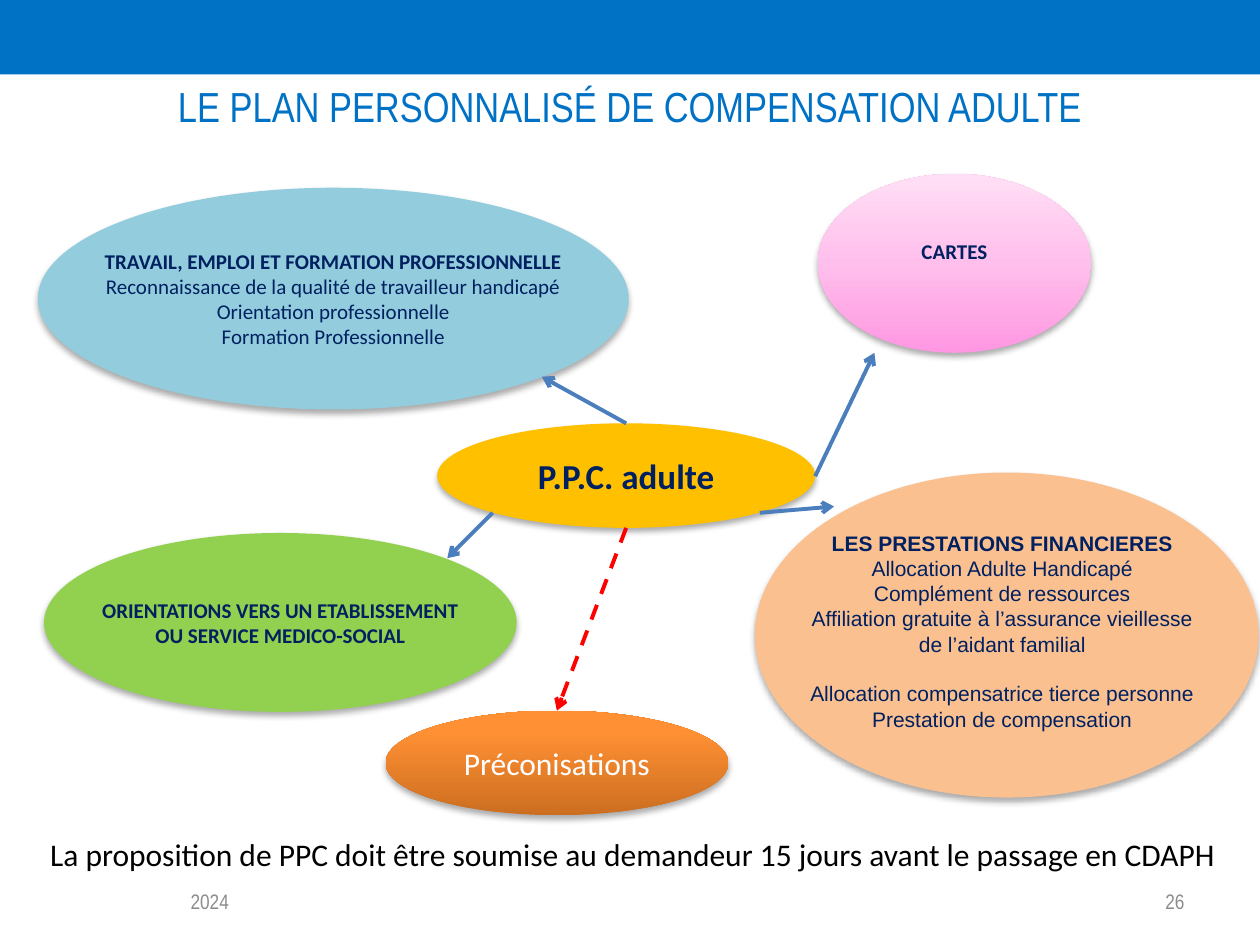
"""Build the slide on the adult personalised compensation plan."""
from dataclasses import dataclass

from lxml import etree
from pptx import Presentation
from pptx.dml.color import RGBColor
from pptx.enum.dml import MSO_LINE
from pptx.enum.shapes import MSO_CONNECTOR, MSO_SHAPE
from pptx.enum.text import MSO_ANCHOR, MSO_AUTO_SIZE, PP_ALIGN
from pptx.oxml.ns import qn
from pptx.util import Inches, Pt

STRAIGHT, DASH = MSO_CONNECTOR.STRAIGHT, MSO_LINE.DASH
OVAL, RECTANGLE = MSO_SHAPE.OVAL, MSO_SHAPE.RECTANGLE
TOP, MIDDLE = MSO_ANCHOR.TOP, MSO_ANCHOR.MIDDLE
LEFT, CENTER, RIGHT = PP_ALIGN.LEFT, PP_ALIGN.CENTER, PP_ALIGN.RIGHT
NO_FIT = MSO_AUTO_SIZE.NONE

COLUMNS, ROWS = 100, 75
CELL = Inches(0.1)
TOP_SITE = 0
COLORS = {
    "brand": "0072C6", "navy": "002060", "white": "FFFFFF", "black": "000000",
    "gray": "8C8C8C", "gold": "FFC000", "aqua": "93CDDD", "peach": "FAC090",
    "green": "92D050", "link": "4B7EBC", "alert": "FF0000",
}
PINKS = ((0, "FF97E2"), (50, "FFBFEC"), (100, "FFDFF5"))
ORANGES = ((0, "CC6E20"), (80, "FF9034"), (100, "FF9136"))


@dataclass(frozen=True)
class Box:
    """A rectangle in grid columns and rows."""
    column: float
    row: float
    width: float
    height: float

    def lengths(self):
        return [cells(n) for n in (self.column, self.row, self.width, self.height)]


@dataclass(frozen=True)
class Topic:
    """An ellipse of the map with its text."""
    box: Box
    fill: str | tuple
    text: str = ""
    size: float = 12
    color: str = "navy"
    bold_lines: int = 1
    wrap: bool = False
    bottom: float = 0.5


@dataclass(frozen=True)
class Arrow:
    """An arrow between two grid points."""
    start: tuple
    end: tuple
    color: str = "link"
    dashed: bool = False


CENTRE = Topic(Box(34.7, 33.6, 30, 8.3), "gold", "P.P.C. adulte", size=20)
ADVICE = Topic(Box(30.6, 56.4, 27.2, 8.3), ORANGES, "Préconisations",
               size=18, color="white", bold_lines=0, wrap=True)
BENEFITS = Topic(Box(59.9, 37.5, 40, 25.8), "peach")
TOPICS = (
    CENTRE,
    Topic(Box(3, 14.9, 46.9, 17.6), "aqua",
          "TRAVAIL, EMPLOI ET FORMATION PROFESSIONNELLE\n"
          "Reconnaissance de la qualité de travailleur handicapé\n"
          "Orientation professionnelle\nFormation Professionnelle"),
    Topic(Box(64.9, 13.8, 21.7, 14.2), PINKS, "CARTES", bottom=2.5),
    BENEFITS,
    Topic(Box(3.5, 42.3, 37.5, 14.2), "green",
          "ORIENTATIONS VERS UN ETABLISSEMENT\nOU SERVICE MEDICO-SOCIAL",
          bold_lines=2),
    ADVICE,
)
BENEFITS_TEXT = (
    "LES PRESTATIONS FINANCIERES\nAllocation Adulte Handicapé\n"
    "Complément de ressources\n"
    "Affiliation gratuite à l’assurance vieillesse de l’aidant familial\n"
    "Allocation compensatrice tierce personne\nPrestation de compensation"
)
TO_WORK = Arrow((49.7, 33.6), (43, 29.9))
TO_ADVICE = Arrow((49.7, 41.9), (44.2, 56.4), "alert", dashed=True)
ARROWS = (
    TO_WORK,
    Arrow((64.7, 37.8), (69.4, 28)),
    Arrow((60.3, 40.7), (66.2, 40.2)),
    Arrow((39.1, 40.7), (35.5, 44.3)),
    TO_ADVICE,
)


def cells(count: float) -> int:
    """Turn a count of grid cells into a length."""
    return round(count * CELL)


def rgb(name: str) -> RGBColor:
    """Look up a named colour."""
    return RGBColor.from_string(COLORS[name])


def write(frame, text: str, *, size: float, color: str, font="Calibri", bold_lines=0,
          align=CENTER, anchor=TOP, wrap=True, bottom=0.5, gap_line=None) -> None:
    """Fill a text frame, one paragraph per line, with the given format."""
    frame.auto_size = NO_FIT
    frame.word_wrap = wrap
    frame.vertical_anchor = anchor
    frame.margin_left = frame.margin_right = cells(1)
    frame.margin_top, frame.margin_bottom = cells(0.5), cells(bottom)
    for number, line in enumerate(text.split("\n")):
        paragraph = frame.add_paragraph() if number else frame.paragraphs[0]
        paragraph.text = line
        paragraph.alignment = align
        paragraph.font.name, paragraph.font.size = font, Pt(size)
        paragraph.font.bold = number < bold_lines
        paragraph.font.color.rgb = rgb(color)
        if number == gap_line:
            paragraph.space_before = Pt(14)


def add_label(slide, box: Box, text: str, **style) -> None:
    """Add a text box."""
    write(slide.shapes.add_textbox(*box.lengths()).text_frame, text, **style)


def paint(shape, fill: str | tuple) -> None:
    """Fill a shape with one colour or with an upward gradient."""
    shape.line.fill.background()
    shape.shadow.inherit = False
    if isinstance(fill, str):
        shape.fill.solid()
        shape.fill.fore_color.rgb = rgb(fill)
        return
    shape.fill.gradient()
    shape.fill.gradient_angle = 90
    stops = shape._element.spPr.find(f".//{qn('a:gsLst')}")
    for stop in list(stops):
        stops.remove(stop)
    for position, color in fill:
        stop = etree.SubElement(stops, qn("a:gs"), pos=str(position * 1000))
        etree.SubElement(stop, qn("a:srgbClr"), val=color)


def cast_shadow(shape) -> None:
    """Give a shape a soft shadow below it."""
    effects = shape._element.spPr.find(qn("a:effectLst"))
    shadow = etree.SubElement(effects, qn("a:outerShdw"), blurRad=str(Pt(3.5)),
                              dist=str(Pt(2.2)), dir="5400000", rotWithShape="0")
    tint = etree.SubElement(shadow, qn("a:srgbClr"), val=COLORS["black"])
    etree.SubElement(tint, qn("a:alpha"), val="32000")


def add_topic(slide, topic: Topic):
    """Draw one ellipse of the map."""
    ellipse = slide.shapes.add_shape(OVAL, *topic.box.lengths())
    paint(ellipse, topic.fill)
    cast_shadow(ellipse)
    if topic.text:
        write(ellipse.text_frame, topic.text, size=topic.size, color=topic.color,
              bold_lines=topic.bold_lines, anchor=MIDDLE, wrap=topic.wrap,
              bottom=topic.bottom)
    return ellipse


def add_arrow(slide, arrow: Arrow):
    """Draw one arrow with an open head at its end."""
    connector = slide.shapes.add_connector(
        STRAIGHT, *(cells(n) for n in arrow.start + arrow.end))
    connector.line.color.rgb = rgb(arrow.color)
    connector.line.width = Pt(2.25)
    if arrow.dashed:
        connector.line.dash_style = DASH
    etree.SubElement(connector.line._get_or_add_ln(), qn("a:tailEnd"), type="arrow")
    etree.SubElement(connector._element.spPr, qn("a:effectLst"))
    return connector


def main() -> None:
    """Build and save the slide."""
    deck = Presentation()
    deck.slide_width, deck.slide_height = cells(COLUMNS), cells(ROWS)
    slide = deck.slides.add_slide(deck.slide_layouts[5])
    paint(slide.shapes.add_shape(RECTANGLE, *Box(0, 0, COLUMNS, 5.9).lengths()), "brand")

    title = slide.shapes.title
    title.left, title.top, title.width, title.height = Box(5, 5.9, 90, 8.7).lengths()
    write(title.text_frame, "LE PLAN PERSONNALISÉ DE COMPENSATION ADULTE",
          size=24, color="brand", font="Arial Narrow")

    ellipses = {topic: add_topic(slide, topic) for topic in TOPICS}
    add_label(slide, Box(63.2, 41.6, 32.7, 19.2), BENEFITS_TEXT, size=12,
              color="navy", font="Arial", bold_lines=1, gap_line=4)
    links = {arrow: add_arrow(slide, arrow) for arrow in ARROWS}
    links[TO_WORK].begin_connect(ellipses[CENTRE], TOP_SITE)
    links[TO_ADVICE].end_connect(ellipses[ADVICE], TOP_SITE)

    add_label(slide, Box(3, 65.8, 95.6, 4),
              "La proposition de PPC doit être soumise au demandeur 15 jours "
              "avant le passage en CDAPH", size=18, color="black", align=LEFT, wrap=False)
    footer = {"size": 12, "color": "gray", "font": "Arial Narrow", "anchor": MIDDLE}
    add_label(slide, Box(5, 69.5, 23.3, 4), "2024", **footer)
    add_label(slide, Box(71.7, 69.5, 23.3, 4), "26", align=RIGHT, **footer)
    deck.save("out.pptx")


if __name__ == "__main__":
    main()
